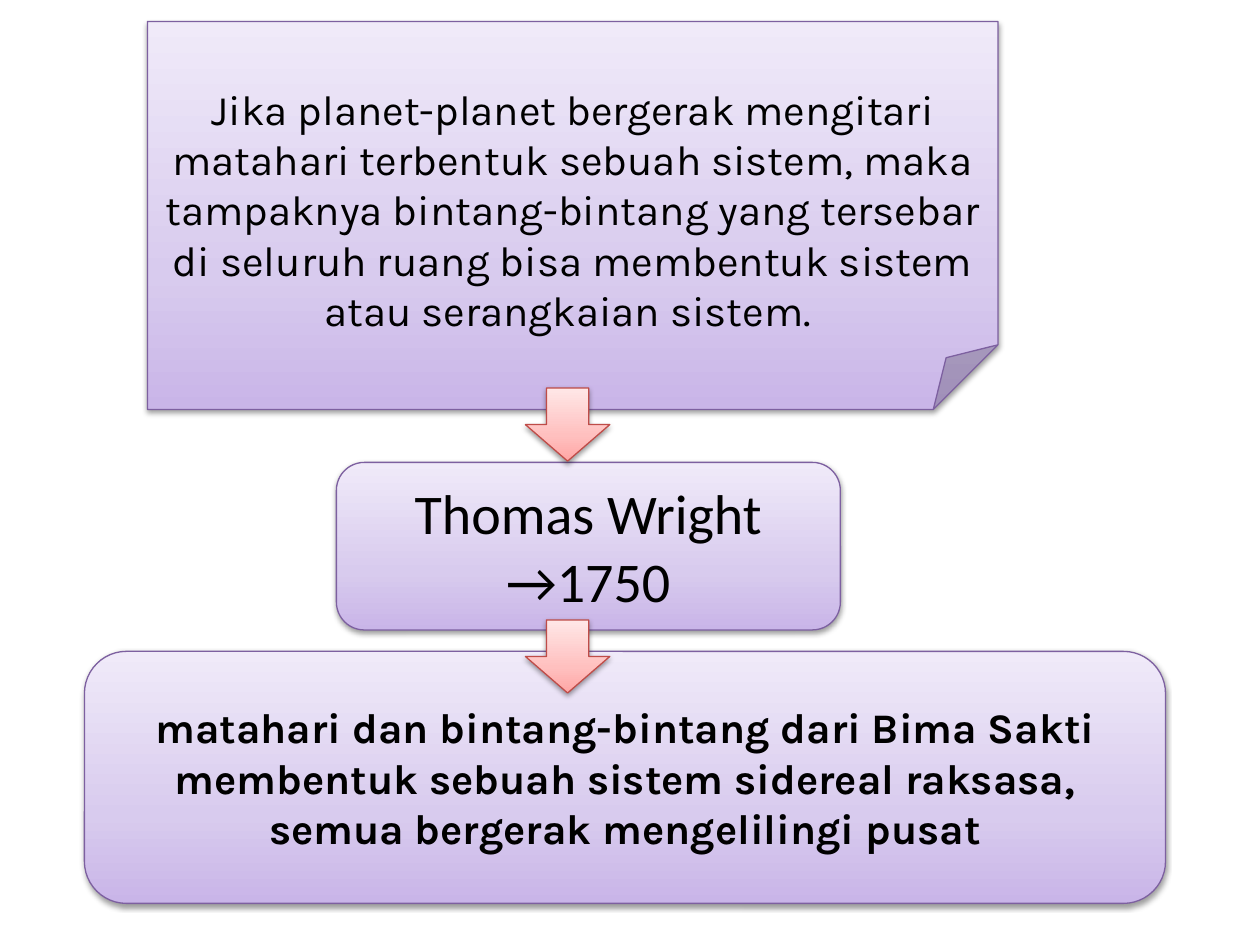
from copy import deepcopy

from lxml.etree import SubElement
from pptx import Presentation
from pptx.dml.color import RGBColor
from pptx.enum.shapes import MSO_SHAPE
from pptx.enum.text import MSO_ANCHOR, PP_ALIGN
from pptx.oxml.ns import qn
from pptx.util import Inches, Pt

PURPLE = {"stops": [(0, "C9B5E8"), (0.35, "D8CBEE"), (1, "F0EAF9")], "line": "7D60A0"}
RED = {"stops": [(0, "FFA6A5"), (0.35, "FFC0BF"), (1, "FFE7E7")], "line": "BF4C48"}

# preset, (left, top, width, height), top inset, text, font format
BOXES = [
    (MSO_SHAPE.FOLDED_CORNER, (1.17, 0.17, 6.75, 3.08), 0.46,
     "Jika planet-planet bergerak mengitari matahari terbentuk sebuah sistem, "
     "maka tampaknya bintang-bintang yang tersebar di seluruh ruang bisa "
     "membentuk sistem atau serangkaian sistem. ",
     {"name": "Karla", "size": Pt(24), "bold": False}),
    (MSO_SHAPE.ROUNDED_RECTANGLE, (2.67, 3.67, 4, 1.33), 0.05,
     "Thomas Wright →1750",
     {"name": "Calibri", "size": Pt(32), "bold": False}),
    (MSO_SHAPE.ROUNDED_RECTANGLE, (0.67, 5.17, 8.58, 2), 0.05,
     "matahari dan bintang-bintang dari Bima Sakti membentuk sebuah sistem "
     "sidereal raksasa, semua bergerak mengelilingi pusat",
     {"name": "Karla", "size": Pt(24), "bold": True}),
]
ARROW_LEFT, ARROW_WIDTH, ARROW_HEIGHT = 4.17, 0.67, 0.58
ARROW_TOPS = [3.08, 4.92]


def color(hex_code):
    return RGBColor.from_string(hex_code)


def add_soft_shadow(shape):
    shape.shadow.inherit = False
    effects = shape._element.spPr.find(qn("a:effectLst"))
    shadow = SubElement(effects, qn("a:outerShdw"), blurRad="40000", dist="20000",
                        dir="5400000", rotWithShape="0")
    black = SubElement(shadow, qn("a:srgbClr"), val="000000")
    SubElement(black, qn("a:alpha"), val="38000")


def add_gradient_shape(page, preset, place, theme):
    shape = page.shapes.add_shape(preset, *map(Inches, place))
    shape.fill.gradient()
    stop_list = shape._element.spPr.find(".//" + qn("a:gsLst"))
    stop_list.append(deepcopy(stop_list[0]))
    for stop, (position, hex_code) in zip(shape.fill.gradient_stops, theme["stops"]):
        stop.position = position
        stop.color.rgb = color(hex_code)
    shape.fill.gradient_angle = 90
    shape.line.color.rgb = color(theme["line"])
    shape.line.width = Pt(0.75)
    add_soft_shadow(shape)
    return shape


def write_text(shape, text, top_inset, font_format):
    frame = shape.text_frame
    frame.word_wrap = True
    frame.vertical_anchor = MSO_ANCHOR.MIDDLE
    frame.margin_top = Inches(top_inset)
    para = frame.paragraphs[0]
    para.alignment = PP_ALIGN.CENTER
    span = para.add_run()
    span.text = text
    span.font.color.rgb = color("000000")
    for name, value in font_format.items():
        setattr(span.font, name, value)


def main():
    deck = Presentation()
    deck.slide_width, deck.slide_height = Inches(10), Inches(7.5)
    page = deck.slides.add_slide(deck.slide_layouts[6])
    for preset, place, top_inset, text, font_format in BOXES:
        box = add_gradient_shape(page, preset, place, PURPLE)
        write_text(box, text, top_inset, font_format)
    for top in ARROW_TOPS:
        place = (ARROW_LEFT, top, ARROW_WIDTH, ARROW_HEIGHT)
        add_gradient_shape(page, MSO_SHAPE.DOWN_ARROW, place, RED)
    deck.save("out.pptx")


if __name__ == "__main__":
    main()
